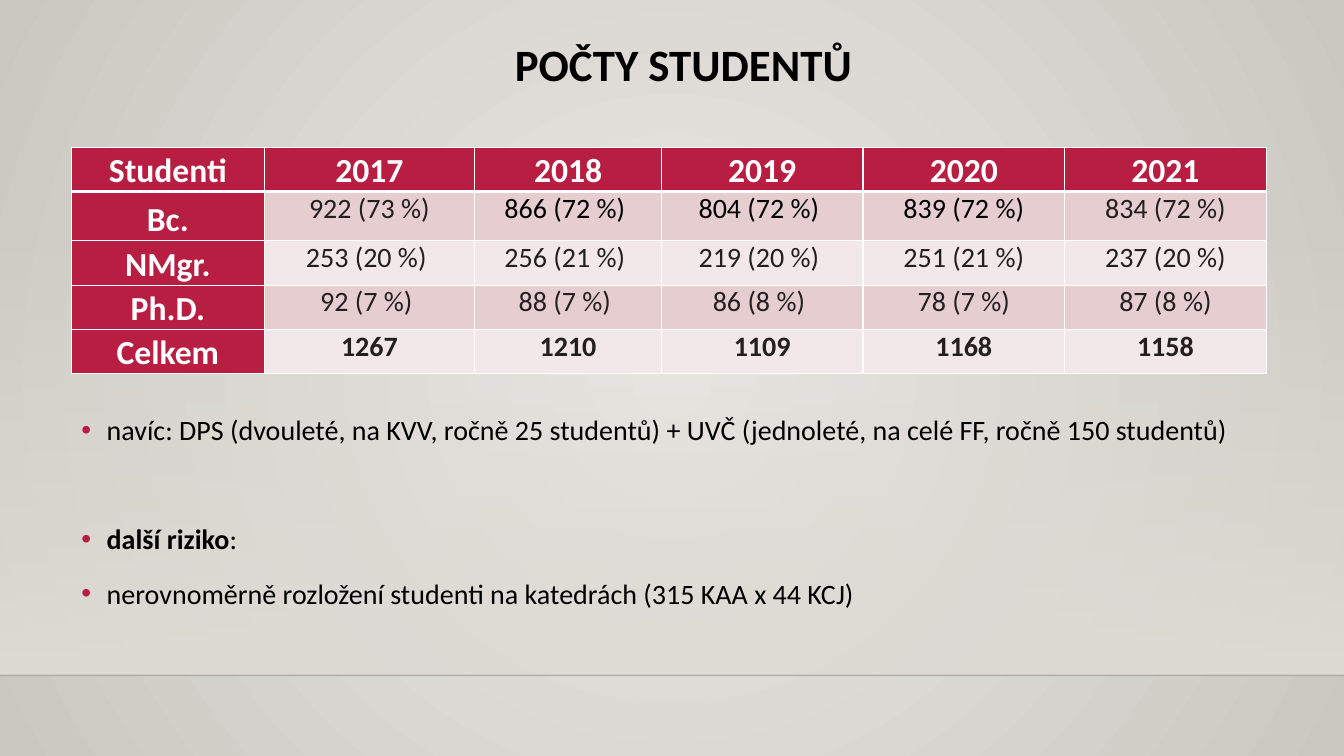
"""Builds the slide on student numbers by degree and year."""
from lxml import etree
from pptx import Presentation
from pptx.dml.color import RGBColor
from pptx.enum.shapes import MSO_CONNECTOR, MSO_SHAPE
from pptx.enum.text import MSO_ANCHOR, PP_ALIGN
from pptx.oxml import parse_xml
from pptx.oxml.ns import nsdecls, qn
from pptx.util import Inches, Pt

RECTANGLE, STRAIGHT = MSO_SHAPE.RECTANGLE, MSO_CONNECTOR.STRAIGHT
TOP, BOTTOM = MSO_ANCHOR.TOP, MSO_ANCHOR.BOTTOM
LEFT, CENTER = PP_ALIGN.LEFT, PP_ALIGN.CENTER

FONT = "Calibri"
CRIMSON, WHITE, BLACK, INK = "B71E42", "FFFFFF", "000000", "231F20"
BANDS = ("E6CDCF", "F3E8E9")
WALL, FLOOR = "DFDBD5", 6.7
TITLE = "POČTY STUDENTŮ "
ROWS = [
    ("Studenti", "2017", "2018", "2019", "2020", "2021"),
    ("Bc.", "922 (73 %)", "866 (72 %) ", "804 (72 %) ", "839 (72 %)", "834 (72 %)"),
    ("NMgr.", "253 (20 %) ", "256 (21 %) ", "219 (20 %) ", "251 (21 %)", "237 (20 %)"),
    ("Ph.D.", "92 (7 %) ", "88 (7 %) ", "86 (8 %) ", "78 (7 %)", "87 (8 %)"),
    ("Celkem", "1267", "1210", "1109", "1168", "1158"),
]
BLACK_CELLS = {(1, 2), (1, 3), (1, 4)}
COLUMN_WIDTHS = (1.91, 2.09, 1.85, 2, 2, 2)
ROW_HEIGHTS = (0.44, 0.49, 0.44, 0.44, 0.44)
BULLETS = [
    (0, [("navíc: DPS (dvouleté, na KVV, ročně 25 studentů) + UVČ "
          "(jednoleté, na celé FF, ročně 150 studentů)", False)]),
    (49, [("další riziko", True), (":", False)]),
    (10, [("nerovnoměrně rozložení studenti na katedrách (315 KAA x 44 KCJ)", False)]),
]


def color(value):
    return RGBColor.from_string(value)


def write(para, text, size=20, fill=BLACK, bold=False, align=LEFT):
    para.alignment = align
    span = para.add_run()
    span.text = text
    span.font.name, span.font.size, span.font.bold = FONT, Pt(size), bold
    span.font.color.rgb = color(fill)


def text_frame(page, left, top, width, height):
    box = page.shapes.add_textbox(Inches(left), Inches(top), Inches(width), Inches(height))
    box.text_frame.word_wrap = True
    return box.text_frame


def set_gradient(fill, owner, stops, direction):
    fill.gradient()
    gradient = owner.find(".//" + qn("a:gradFill"))
    marks = "".join(
        f'<a:gs pos="{place * 1000}"><a:srgbClr val="{value}">'
        f'<a:alpha val="{alpha * 1000}"/></a:srgbClr></a:gs>'
        for place, value, alpha in stops)
    gradient.getparent().replace(gradient, parse_xml(
        f'<a:gradFill {nsdecls("a")} rotWithShape="1">'
        f'<a:gsLst>{marks}</a:gsLst>{direction}</a:gradFill>'))


def add_backdrop(page):
    circle = '<a:path path="circle"><a:fillToRect l="50000" t="50000" r="50000" b="50000"/></a:path>'
    set_gradient(page.background.fill, page.element,
                 [(0, "ECEAE7", 100), (100, "CAC7C1", 100)], circle)
    wall = page.shapes.add_shape(RECTANGLE, 0, Inches(2.21), Inches(13.33), Inches(FLOOR - 2.21))
    wall.shadow.inherit = False
    wall.line.fill.background()
    set_gradient(wall.fill, wall.element, [(0, WALL, 0), (100, WALL, 100)],
                 '<a:lin ang="5400000" scaled="0"/>')
    edge = page.shapes.add_connector(STRAIGHT, 0, Inches(FLOOR), Inches(13.33), Inches(FLOOR))
    edge.line.width = Pt(1)
    edge.line.color.rgb = color("000001")
    tint = edge.element.find(".//" + qn("a:ln")).find(".//" + qn("a:srgbClr"))
    etree.SubElement(tint, qn("a:alpha"), val="20000")
    etree.SubElement(edge.element.spPr, qn("a:effectLst"))


def set_borders(cell, widths):
    properties = cell._tc.get_or_add_tcPr()
    for place, (side, width) in enumerate(widths.items()):
        properties.insert(place, parse_xml(
            f'<a:ln{side} {nsdecls("a")} w="{Pt(width)}"><a:solidFill>'
            f'<a:srgbClr val="{WHITE}"/></a:solidFill></a:ln{side}>'))


def add_students(page):
    frame = page.shapes.add_table(len(ROWS), len(COLUMN_WIDTHS), Inches(0.71), Inches(1.46),
                                  Inches(sum(COLUMN_WIDTHS)), Inches(sum(ROW_HEIGHTS)))
    table = frame.table
    for column, width in zip(table.columns, COLUMN_WIDTHS):
        column.width = Inches(width)
    for row, height in zip(table.rows, ROW_HEIGHTS):
        row.height = Inches(height)
    for r, values in enumerate(ROWS):
        for c, value in enumerate(values):
            cell = table.cell(r, c)
            heading = r == 0 or c == 0
            cell.margin_left = cell.margin_right = Inches(0.02 if heading else 0.07)
            cell.margin_top = cell.margin_bottom = 0
            cell.vertical_anchor = BOTTOM if heading else TOP
            cell.fill.solid()
            cell.fill.fore_color.rgb = color(CRIMSON if heading else BANDS[(r - 1) % 2])
            set_borders(cell, {"L": 1, "R": 1, "T": 3 if r == 1 else 1, "B": 3 if r == 0 else 1})
            ink = BLACK if (r, c) in BLACK_CELLS else INK
            write(cell.text_frame.paragraphs[0], value, size=24 if heading else 20,
                  fill=WHITE if heading else ink,
                  bold=heading or r == len(ROWS) - 1, align=CENTER)


def add_bullets(page):
    frame = text_frame(page, 0.71, 3.98, 12.05, 2.72)
    for number, (gap, spans) in enumerate(BULLETS):
        para = frame.add_paragraph() if number else frame.paragraphs[0]
        para.line_spacing = 1.2
        para.space_before = Pt(gap)
        properties = para._p.get_or_add_pPr()
        properties.set("marL", str(Inches(0.25)))
        properties.set("indent", str(-Inches(0.25)))
        tint = etree.SubElement(properties, qn("a:buClr"))
        etree.SubElement(tint, qn("a:srgbClr"), val=CRIMSON)
        etree.SubElement(properties, qn("a:buFont"), typeface="Arial")
        etree.SubElement(properties, qn("a:buChar"), char="•")
        for text, bold in spans:
            write(para, text, bold=bold)


def main():
    deck = Presentation()
    deck.slide_width, deck.slide_height = Inches(13.33), Inches(7.5)
    page = deck.slides.add_slide(deck.slide_layouts[6])
    add_backdrop(page)
    title = text_frame(page, 1.58, 0.38, 10.5, 1.08).paragraphs[0]
    title.line_spacing = 0.9
    write(title, TITLE, size=32, bold=True, align=CENTER)
    add_students(page)
    add_bullets(page)
    deck.save("out.pptx")


if __name__ == "__main__":
    main()
